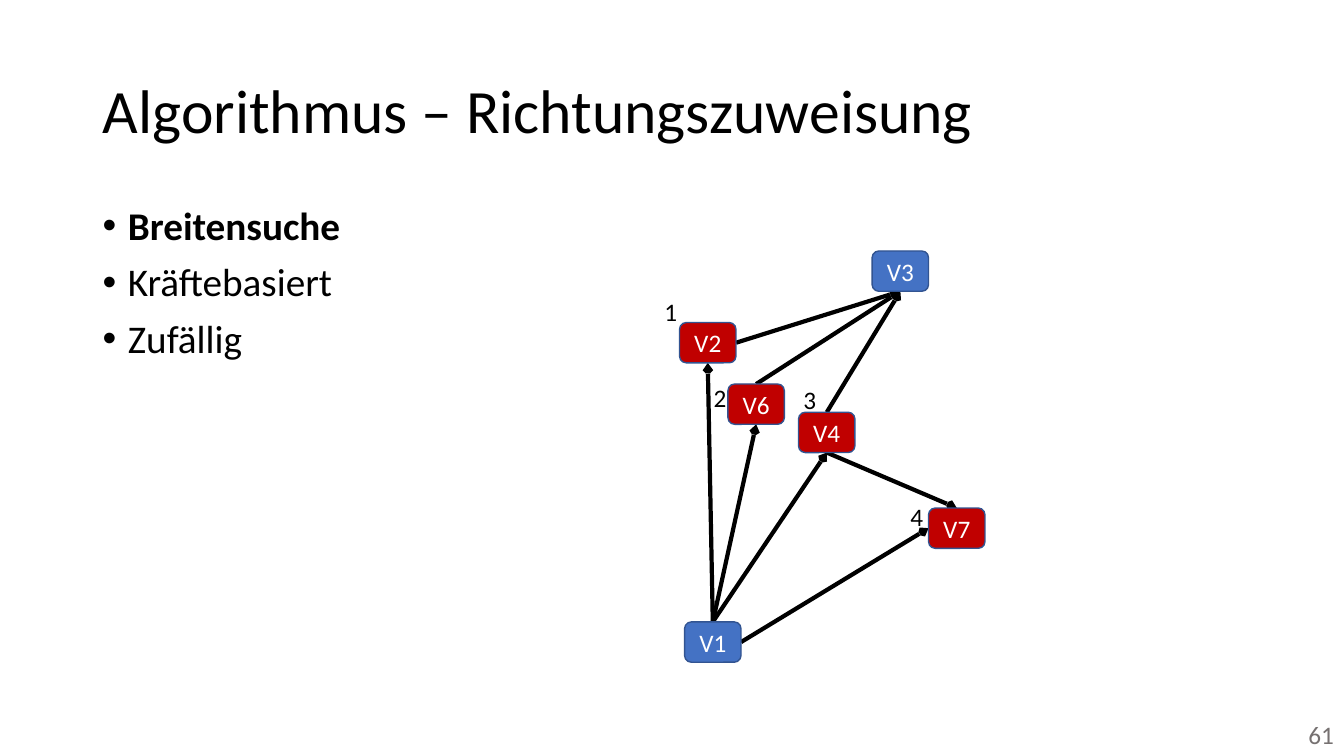
from dataclasses import dataclass

from lxml.etree import SubElement
from pptx import Presentation
from pptx.dml.color import RGBColor
from pptx.enum.shapes import MSO_CONNECTOR, MSO_SHAPE
from pptx.enum.text import MSO_ANCHOR, MSO_AUTO_SIZE, PP_ALIGN
from pptx.oxml.ns import qn
from pptx.shapes.autoshape import Shape
from pptx.slide import Slide
from pptx.text.text import _Paragraph
from pptx.util import Inches, Pt

FONT = "Calibri"
COLORS = {
    "text": "000000",
    "edge": "000000",
    "page": "767171",
    "node_text": "FFFFFF",
    "node_border": "325491",
    "plain": "4472C4",
    "visited": "C00000",
}
NODE_WIDTH, NODE_HEIGHT = 0.56, 0.4
TOP, LEFT, BOTTOM, RIGHT = range(4)


@dataclass
class Node:
    name: str
    left: float
    top: float
    color: str


@dataclass
class Edge:
    start: str
    start_side: int
    end: str
    end_side: int


@dataclass
class Label:
    text: str
    left: float
    top: float
    width: float = 0.34
    color: str = "text"
    align: PP_ALIGN = PP_ALIGN.LEFT
    wrap: bool = True


NODES = [
    Node("V1", 6.79, 6.17, "plain"),
    Node("V2", 6.74, 3.2, "visited"),
    Node("V3", 8.65, 2.49, "plain"),
    Node("V4", 7.92, 4.09, "visited"),
    Node("V6", 7.22, 3.81, "visited"),
    Node("V7", 9.21, 5.04, "visited"),
]
EDGES = [
    Edge("V1", TOP, "V2", BOTTOM),
    Edge("V1", TOP, "V6", BOTTOM),
    Edge("V1", TOP, "V4", BOTTOM),
    Edge("V1", RIGHT, "V7", LEFT),
    Edge("V2", RIGHT, "V3", BOTTOM),
    Edge("V6", TOP, "V3", BOTTOM),
    Edge("V4", TOP, "V3", BOTTOM),
    Edge("V4", BOTTOM, "V7", TOP),
]
LABELS = [
    Label("1", 6.49, 2.89),
    Label("2", 6.98, 3.74),
    Label("3", 7.87, 3.76),
    Label("4", 8.93, 4.92),
    Label("61", 12.87, 7.09, 0.46, "page", PP_ALIGN.RIGHT, False),
]
METHODS = ["Breitensuche", "Kräftebasiert", "Zufällig"]


def rgb(name: str) -> RGBColor:
    return RGBColor.from_string(COLORS[name])


def set_font(paragraph: _Paragraph, size: float, color: str, bold: bool = False) -> None:
    font = paragraph.font
    font.name, font.size, font.bold = FONT, Pt(size), bold
    font.color.rgb = rgb(color)


def add_title(slide: Slide, text: str) -> None:
    title = slide.shapes.title
    title.left, title.top = Inches(0.92), Inches(0.4)
    title.width, title.height = Inches(11.5), Inches(1.45)
    frame = title.text_frame
    frame.text = text
    frame.auto_size = MSO_AUTO_SIZE.NONE
    frame.vertical_anchor = MSO_ANCHOR.MIDDLE
    paragraph = frame.paragraphs[0]
    paragraph.alignment = PP_ALIGN.LEFT
    paragraph.line_spacing = 0.9
    set_font(paragraph, 44, "text")


def add_bullets(slide: Slide, items: list[str], bold_item: str) -> None:
    box = slide.shapes.add_textbox(Inches(0.92), Inches(2), Inches(5.65), Inches(4.76))
    frame = box.text_frame
    frame.word_wrap = True
    frame.text = "\n".join(items)
    for paragraph in frame.paragraphs:
        paragraph.line_spacing = 0.9
        paragraph.space_before = Pt(10)
        properties = paragraph._p.get_or_add_pPr()
        properties.set("marL", str(Inches(0.25)))
        properties.set("indent", str(Inches(-0.25)))
        SubElement(properties, qn("a:buFont"), typeface="Arial")
        SubElement(properties, qn("a:buChar"), char="•")
        set_font(paragraph, 28, "text", paragraph.text == bold_item)


def add_label(slide: Slide, label: Label) -> None:
    box = slide.shapes.add_textbox(
        Inches(label.left), Inches(label.top), Inches(label.width), Inches(0.4)
    )
    frame = box.text_frame
    frame.word_wrap = label.wrap
    frame.auto_size = MSO_AUTO_SIZE.SHAPE_TO_FIT_TEXT
    frame.text = label.text
    paragraph = frame.paragraphs[0]
    paragraph.alignment = label.align
    set_font(paragraph, 18, label.color)


def add_node(slide: Slide, node: Node) -> Shape:
    shape = slide.shapes.add_shape(
        MSO_SHAPE.ROUNDED_RECTANGLE,
        Inches(node.left), Inches(node.top), Inches(NODE_WIDTH), Inches(NODE_HEIGHT),
    )
    shape.shadow.inherit = False
    shape.fill.solid()
    shape.fill.fore_color.rgb = rgb(node.color)
    shape.line.color.rgb = rgb("node_border")
    shape.line.width = Pt(1)
    frame = shape.text_frame
    frame.text = node.name
    frame.vertical_anchor = MSO_ANCHOR.MIDDLE
    paragraph = frame.paragraphs[0]
    paragraph.alignment = PP_ALIGN.CENTER
    set_font(paragraph, 18, "node_text")
    return shape


def add_edge(slide: Slide, edge: Edge, nodes: dict[str, Shape]) -> None:
    connector = slide.shapes.add_connector(MSO_CONNECTOR.STRAIGHT, 0, 0, 0, 0)
    connector.begin_connect(nodes[edge.start], edge.start_side)
    connector.end_connect(nodes[edge.end], edge.end_side)
    connector.line.color.rgb = rgb("edge")
    connector.line.width = Pt(3)
    SubElement(connector.line._get_or_add_ln(), qn("a:tailEnd"), type="arrow", w="sm", len="sm")
    SubElement(connector._element.spPr, qn("a:effectLst"))


def main() -> None:
    presentation = Presentation()
    presentation.slide_width, presentation.slide_height = Inches(13.33), Inches(7.5)
    slide = presentation.slides.add_slide(presentation.slide_layouts[5])

    # Title and list of methods
    add_title(slide, "Algorithmus – Richtungszuweisung")
    add_bullets(slide, METHODS, "Breitensuche")

    # Directed graph
    nodes = {node.name: add_node(slide, node) for node in NODES}
    for edge in EDGES:
        add_edge(slide, edge, nodes)

    # Visiting order and page number
    for label in LABELS:
        add_label(slide, label)

    # Nodes lie in front of the edges
    for shape in nodes.values():
        shape.element.getparent().append(shape.element)

    presentation.save("out.pptx")


if __name__ == "__main__":
    main()
